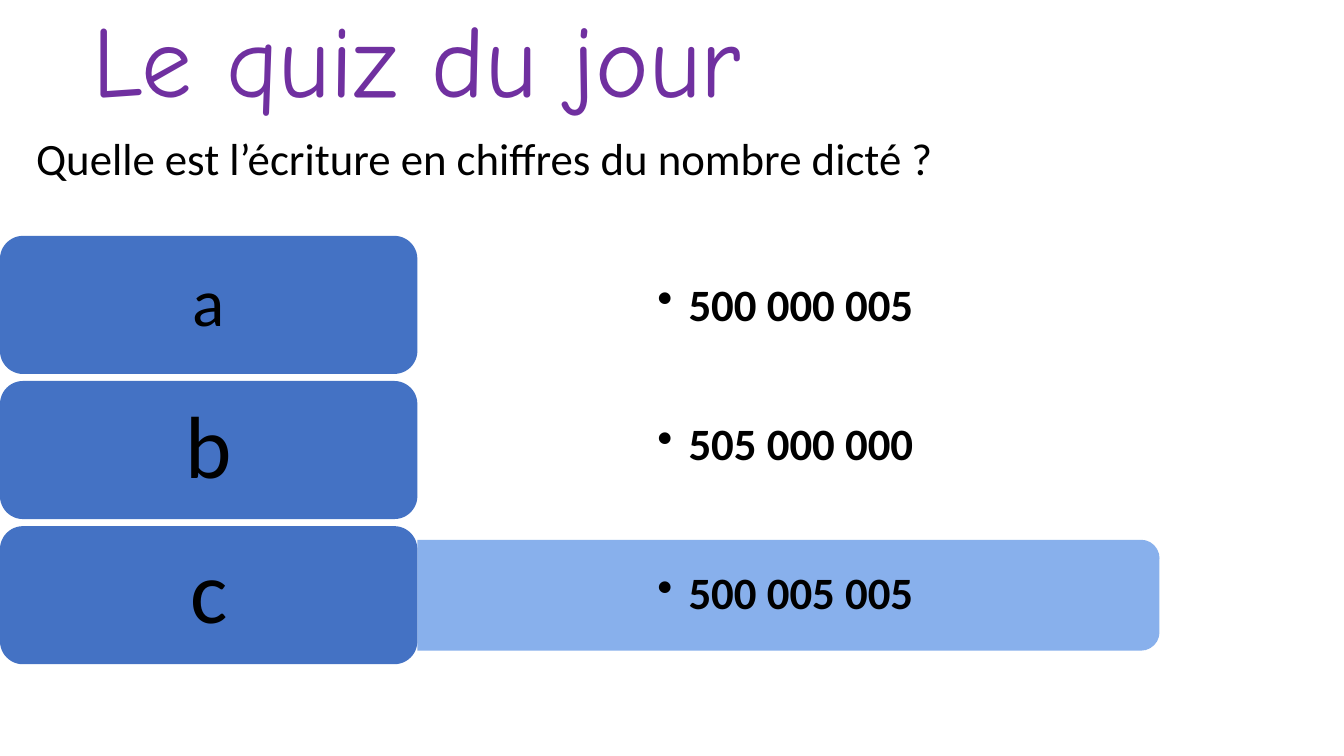
import pptx
import pptx.dml.color
import pptx.enum.shapes
import pptx.enum.text
import pptx.oxml
import pptx.oxml.ns
import pptx.util

Inches = pptx.util.Inches
Shapes = pptx.enum.shapes.MSO_SHAPE
Align = pptx.enum.text.PP_ALIGN
Anchor = pptx.enum.text.MSO_ANCHOR

WIDTH, HEIGHT = 13.33, 7.5
CARD_WIDTH, CARD_HEIGHT, ROW_STEP = 4.14, 1.37, 1.44
BAR_WIDTH, BAR_HEIGHT = 7.36, 1.1
ANSWERS = [
    ("a", 48, "500 000 005", 0.02, False),
    ("b", 63, "505 000 000", -0.04, False),
    ("c", 63, "500 005 005", 0, True),
]


def color(value):
    """Return the colour of a hex string."""
    return pptx.dml.color.RGBColor.from_string(value)


def write(shape, text, size, font="Calibri", ink="000000", bold=False,
          align=Align.LEFT, anchor=Anchor.MIDDLE, spacing=0.9):
    """Put one formatted paragraph in a shape and return it."""
    frame = shape.text_frame
    frame.text = text
    frame.word_wrap = True
    frame.vertical_anchor = anchor
    para = frame.paragraphs[0]
    para.alignment = align
    para.line_spacing = spacing
    span = para.runs[0].font
    span.name, span.size, span.bold = font, pptx.util.Pt(size), bold
    span.color.rgb = color(ink)
    return para


def add_text_box(page, left, top, width, height):
    """Add an empty text box placed in inches."""
    return page.shapes.add_textbox(*map(Inches, (left, top, width, height)))


def add_block(page, kind, left, top, width, height, fill):
    """Add a plain filled shape without outline or shadow."""
    block = page.shapes.add_shape(kind, *map(Inches, (left, top, width, height)))
    block.shadow.inherit = False
    block.fill.solid()
    block.fill.fore_color.rgb = color(fill)
    block.line.fill.background()
    return block


def add_bullet(para, indent):
    """Give a paragraph a round bullet with a hanging indent."""
    properties = para._p.get_or_add_pPr()
    properties.set("marL", str(Inches(indent)))
    properties.set("indent", str(-Inches(indent)))
    namespace = pptx.oxml.ns.nsdecls("a")
    properties.append(pptx.oxml.parse_xml(f'<a:buChar {namespace} char="•"/>'))


def add_highlight(page, left, middle):
    """Draw the translucent bar behind the right answer."""
    bar = add_block(page, Shapes.ROUND_2_SAME_RECTANGLE,
                    left + (BAR_WIDTH - BAR_HEIGHT) / 2, middle - BAR_WIDTH / 2,
                    BAR_HEIGHT, BAR_WIDTH, "7CA8EA")
    bar.rotation = 90
    tint = bar.fill._xPr.find(".//" + pptx.oxml.ns.qn("a:srgbClr"))
    namespace = pptx.oxml.ns.nsdecls("a")
    tint.append(pptx.oxml.parse_xml(f'<a:alpha {namespace} val="90000"/>'))


def add_answer(page, left, top, letter, size, number, shift, correct):
    """Draw one row: the letter card and its number."""
    bar_left = left + CARD_WIDTH
    middle = top + CARD_HEIGHT / 2 + shift
    if correct:
        add_highlight(page, bar_left, middle)
    box = add_text_box(page, bar_left, middle - 0.5, 7.3, 1)
    para = write(box, number, 32, bold=True, align=Align.CENTER)
    add_bullet(para, 0.31)
    card = add_block(page, Shapes.ROUNDED_RECTANGLE, left, top,
                     CARD_WIDTH, CARD_HEIGHT, "4472C4")
    write(card, letter, size, align=Align.CENTER)


def add_heading(page, left, top):
    """Write the title and the question below it."""
    title = add_text_box(page, left + 0.66, top, 11.5, 1.15)
    frame = title.text_frame
    frame.margin_left = frame.margin_right = 0
    frame.margin_top = frame.margin_bottom = 0
    write(title, "Le quiz du jour", 72.5, "Comic Neue", "7030A0")
    question = add_text_box(page, left, top + 1.18, 10.58, 0.64)
    write(question, "Quelle est l’écriture en chiffres du nombre dicté ?", 32,
          anchor=Anchor.TOP, spacing=1)


def main():
    """Build and save the quiz slide."""
    deck = pptx.Presentation()
    deck.slide_width, deck.slide_height = Inches(WIDTH), Inches(HEIGHT)
    page = deck.slides.add_slide(deck.slide_layouts[6])
    add_heading(page, 0.26, 0.07)
    for row, answer in enumerate(ANSWERS):
        add_answer(page, 0, 2.34 + row * ROW_STEP, *answer)
    deck.save("out.pptx")


if __name__ == "__main__":
    main()
